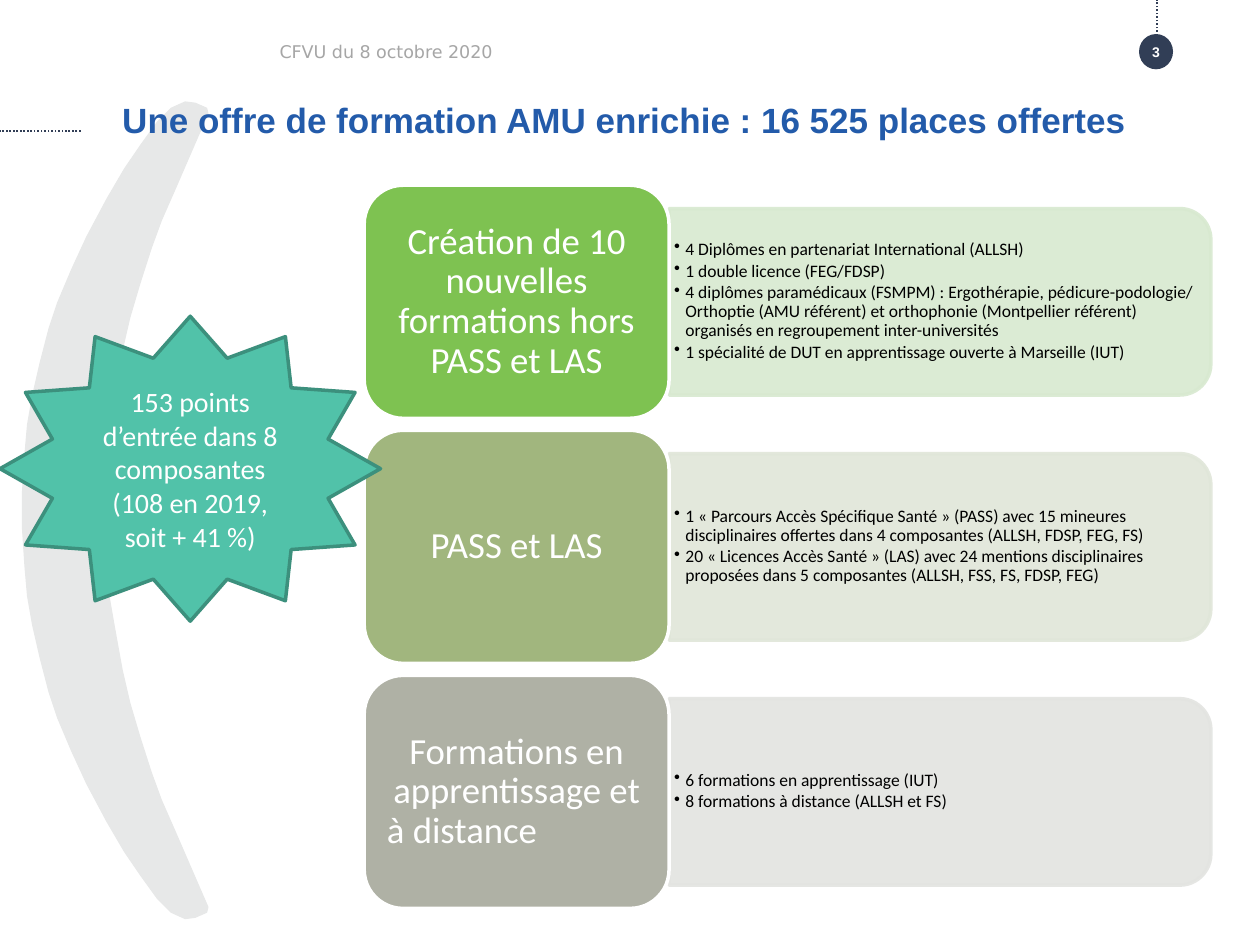
from lxml.etree import SubElement
from pptx import Presentation
from pptx.dml.color import RGBColor
from pptx.enum.dml import MSO_LINE_DASH_STYLE as DASH
from pptx.enum.shapes import MSO_CONNECTOR_TYPE as CONNECTOR, MSO_SHAPE as SHAPE
from pptx.enum.text import MSO_ANCHOR as ANCHOR, PP_ALIGN as ALIGN
from pptx.oxml.ns import qn
from pptx.util import Inches, Pt

COLORS = {
    "navy": "313E56", "title": "235BAA", "crescent": "E7E8E8", "date": "A6A6A6",
    "white": "FFFFFF", "black": "000000", "star": "51C2A9", "star_edge": "3C907D",
}
ROWS = [
    {"card": "7EC251", "panel": "D8E9D0",
     "label": [("Création de 10 nouvelles formations hors PASS et LAS", ALIGN.CENTER)],
     "items": ["4 Diplômes en partenariat International (ALLSH)",
               "1 double licence (FEG/FDSP)",
               "4 diplômes paramédicaux (FSMPM) : Ergothérapie, pédicure-podologie/ "
               "Orthoptie (AMU référent) et orthophonie (Montpellier référent) "
               "organisés en regroupement inter-universités",
               "1 spécialité de DUT en apprentissage ouverte à Marseille (IUT)"]},
    {"card": "A1B67E", "panel": "E0E6D9",
     "label": [("PASS et LAS", ALIGN.CENTER)],
     "items": ["1 « Parcours Accès Spécifique Santé » (PASS) avec 15 mineures "
               "disciplinaires offertes dans 4 composantes (ALLSH, FDSP, FEG, FS)",
               "20 « Licences Accès Santé » (LAS) avec 24 mentions disciplinaires "
               "proposées dans 5 composantes (ALLSH, FSS, FS, FDSP, FEG)"]},
    {"card": "AFB1A5", "panel": "E3E4E1",
     "label": [("Formations en apprentissage et", ALIGN.CENTER), ("à distance", ALIGN.LEFT)],
     "items": ["6 formations en apprentissage (IUT)",
               "8 formations à distance (ALLSH et FS)"]},
]
ROW_PITCH = 1.945
CRESCENT_AXIS = 4.05
CRESCENT_OUTER = [
    (1.65, 0.9), (1.64, 0.86), (1.55, 0.82), (1.47, 0.81), (1.36, 0.86), (1.25, 0.97),
    (1.12, 1.15), (0.99, 1.34), (0.85, 1.58), (0.69, 1.88), (0.57, 2.14), (0.46, 2.4),
    (0.39, 2.61), (0.32, 2.88), (0.26, 3.14), (0.22, 3.37), (0.2, 3.6), (0.18, 3.9),
]
CRESCENT_INNER = [
    (0.83, 3.93), (0.85, 3.63), (0.87, 3.34), (0.91, 3.11), (0.97, 2.78), (1.03, 2.52),
    (1.11, 2.25), (1.2, 1.97), (1.28, 1.75), (1.39, 1.5), (1.52, 1.2),
]


def rgb(value):
    """Return the colour for a name in COLORS or a hex string."""
    return RGBColor.from_string(COLORS.get(value, value))


def paint(shape, fill, line=None, width=2):
    """Give a shape a flat fill, an optional line and no shadow."""
    shape.shadow.inherit = False
    shape.fill.solid()
    shape.fill.fore_color.rgb = rgb(fill)
    if line:
        shape.line.color.rgb = rgb(line)
        shape.line.width = Pt(width)
    else:
        shape.line.fill.background()


def make_translucent(shape, percent):
    """Set the opacity of the fill and line of a shape."""
    for color in shape._element.spPr.iter(qn("a:srgbClr")):
        SubElement(color, qn("a:alpha")).set("val", str(percent * 1000))


def set_frame(shape, margins=(0.1, 0.05), anchor=ANCHOR.MIDDLE, wrap=True):
    """Set wrapping, anchor and margins, and return the text frame."""
    frame = shape.text_frame
    horizontal, vertical = (Inches(margin) for margin in margins)
    values = {"word_wrap": wrap, "vertical_anchor": anchor,
              "margin_left": horizontal, "margin_right": horizontal,
              "margin_top": vertical, "margin_bottom": vertical}
    for name, value in values.items():
        setattr(frame, name, value)
    return frame


def write(frame, lines, size, color, font="Calibri", bold=False, bullet=False, **layout):
    """Write (text, alignment) lines as formatted paragraphs."""
    for index, (text, alignment) in enumerate(lines):
        paragraph = frame.paragraphs[0] if index == 0 else frame.add_paragraph()
        paragraph.text = text
        for name, value in {"alignment": alignment, **layout}.items():
            setattr(paragraph, name, value)
        if bullet:
            properties = paragraph._p.get_or_add_pPr()
            properties.set("marL", str(Inches(0.09)))
            properties.set("indent", str(-Inches(0.09)))
            SubElement(properties, qn("a:buChar")).set("char", "•")
        for name, value in {"name": font, "size": Pt(size), "bold": bold}.items():
            setattr(paragraph.font, name, value)
        paragraph.font.color.rgb = rgb(color)


def add_crescent(slide):
    """Draw the crescent, whose lower half mirrors its upper half."""
    half = CRESCENT_INNER[::-1]
    mirror = [(x, 2 * CRESCENT_AXIS - y) for x, y in CRESCENT_OUTER[::-1] + half[::-1][:0]]
    inner_mirror = [(x, 2 * CRESCENT_AXIS - y) for x, y in half]
    points = CRESCENT_OUTER + mirror + inner_mirror + CRESCENT_INNER
    points = [(Inches(x), Inches(y)) for x, y in points]
    builder = slide.shapes.build_freeform(*points[0])
    builder.add_line_segments(points[1:], close=True)
    paint(builder.convert_to_shape(), "crescent", "crescent", 0.75)


def add_dotted_line(slide, start, end):
    """Draw a dotted line between two points."""
    ends = [Inches(value) for value in (*start, *end)]
    line = slide.shapes.add_connector(CONNECTOR.STRAIGHT, *ends)
    line.line.color.rgb = rgb("navy")
    line.line.width = Pt(1)
    line.line.dash_style = DASH.ROUND_DOT
    SubElement(line._element.spPr, qn("a:effectLst"))


def add_header(slide):
    """Place the page number, dotted lines, date and title."""
    badge = slide.shapes.add_shape(SHAPE.OVAL, Inches(9.04), Inches(0.27),
                                   Inches(0.27), Inches(0.28))
    paint(badge, "navy")
    write(set_frame(badge, (0, 0), wrap=False), [("3", ALIGN.CENTER)], 8, "white", "Arial", True)
    add_dotted_line(slide, (9.18, 0.28), (9.18, 0))
    add_dotted_line(slide, (0.64, 1.04), (0, 1.04))
    date = slide.shapes.add_textbox(Inches(2.12), Inches(0.19), Inches(6.62), Inches(0.44))
    write(set_frame(date), [("CFVU du 8 octobre 2020", ALIGN.LEFT)], 10, "date", "DejaVu Sans")
    title = slide.shapes.title
    box = {"left": 0.97, "top": 0.76, "width": 9, "height": 0.7}
    for name, value in box.items():
        setattr(title, name, Inches(value))
    write(set_frame(title, (0, 0.02), ANCHOR.TOP),
          [("Une offre de formation AMU enrichie : 16 525 places offertes", ALIGN.LEFT)],
          20, "title", "Arial", True)
    slide.shapes._spTree.append(title._element)


def add_row(slide, row, left, top, width, height):
    """Place a label card and its panel of bullets in the given box."""
    card_width, panel_height = 2.42, 1.48
    panel_width = width - card_width
    center_x = left + card_width + panel_width / 2
    center_y = top + height / 2
    panel = slide.shapes.add_shape(
        SHAPE.ROUND_2_SAME_RECTANGLE,
        Inches(center_x - panel_height / 2), Inches(center_y - panel_width / 2),
        Inches(panel_height), Inches(panel_width))
    panel.rotation = 90
    paint(panel, row["panel"], row["panel"])
    make_translucent(panel, 90)
    details = slide.shapes.add_textbox(Inches(left + card_width), Inches(top + 0.25),
                                       Inches(panel_width - 0.07), Inches(1.34))
    write(set_frame(details, (0.04, 0.02)), [(item, ALIGN.LEFT) for item in row["items"]],
          10, "black", bullet=True, line_spacing=0.9, space_after=Pt(1.5))
    card = slide.shapes.add_shape(SHAPE.ROUNDED_RECTANGLE, Inches(left), Inches(top),
                                  Inches(card_width), Inches(height))
    paint(card, row["card"], "white")
    write(set_frame(card, (0.09, 0.04)), row["label"], 21, "white", line_spacing=0.9)


def add_star(slide, left, top, width, height):
    """Place the star with the number of entry points."""
    star = slide.shapes.add_shape(SHAPE.STAR_12_POINT, Inches(left), Inches(top),
                                  Inches(width), Inches(height))
    paint(star, "star", "star_edge")
    lines = ["153 points d’entrée dans 8 composantes", "(108 en 2019, soit + 41 %)"]
    write(set_frame(star), [(line, ALIGN.CENTER) for line in lines], 16, "white")


def main():
    """Build the slide and save it."""
    presentation = Presentation()
    presentation.slide_width, presentation.slide_height = Inches(10), Inches(7.5)
    slide = presentation.slides.add_slide(presentation.slide_layouts[5])
    add_crescent(slide)
    add_header(slide)
    for index, row in enumerate(ROWS):
        add_row(slide, row, 2.89, 1.47 + index * ROW_PITCH, 6.72, 1.85)
    add_star(slide, 0, 2.51, 3.02, 2.42)
    presentation.save("out.pptx")


if __name__ == "__main__":
    main()
